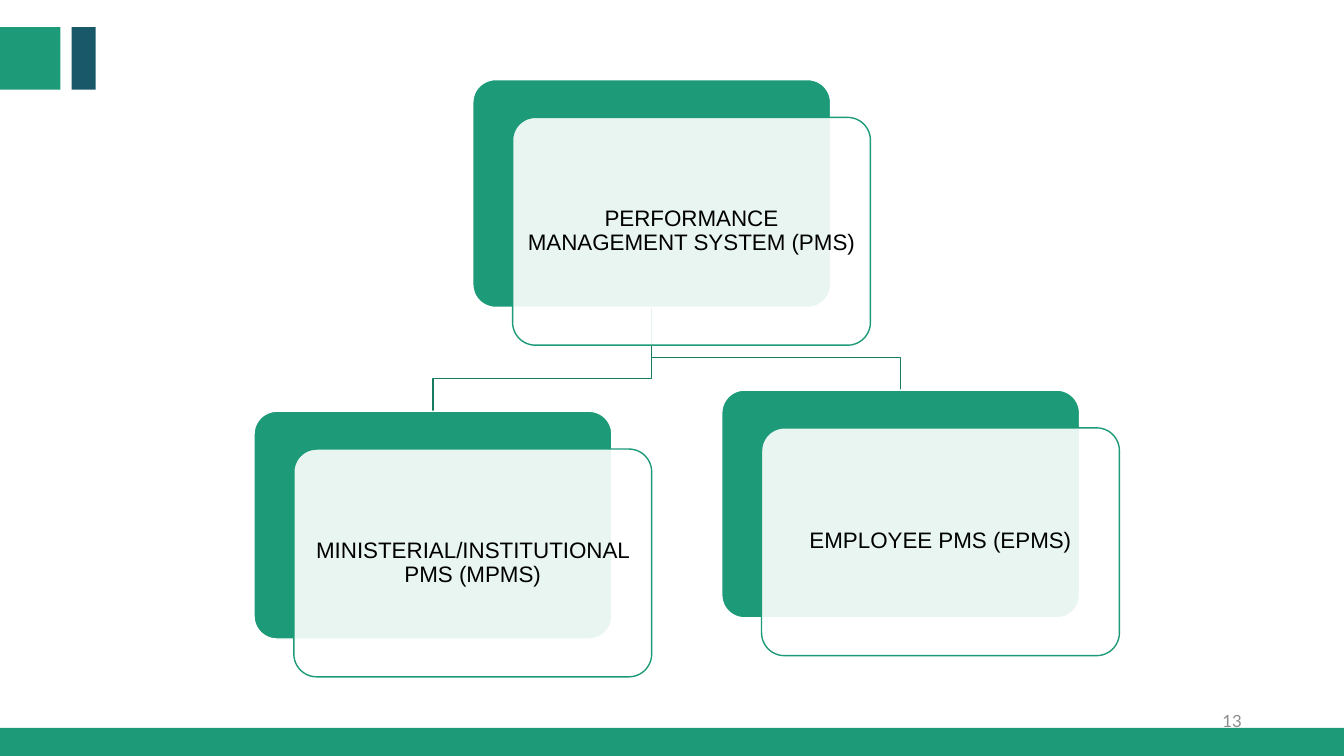
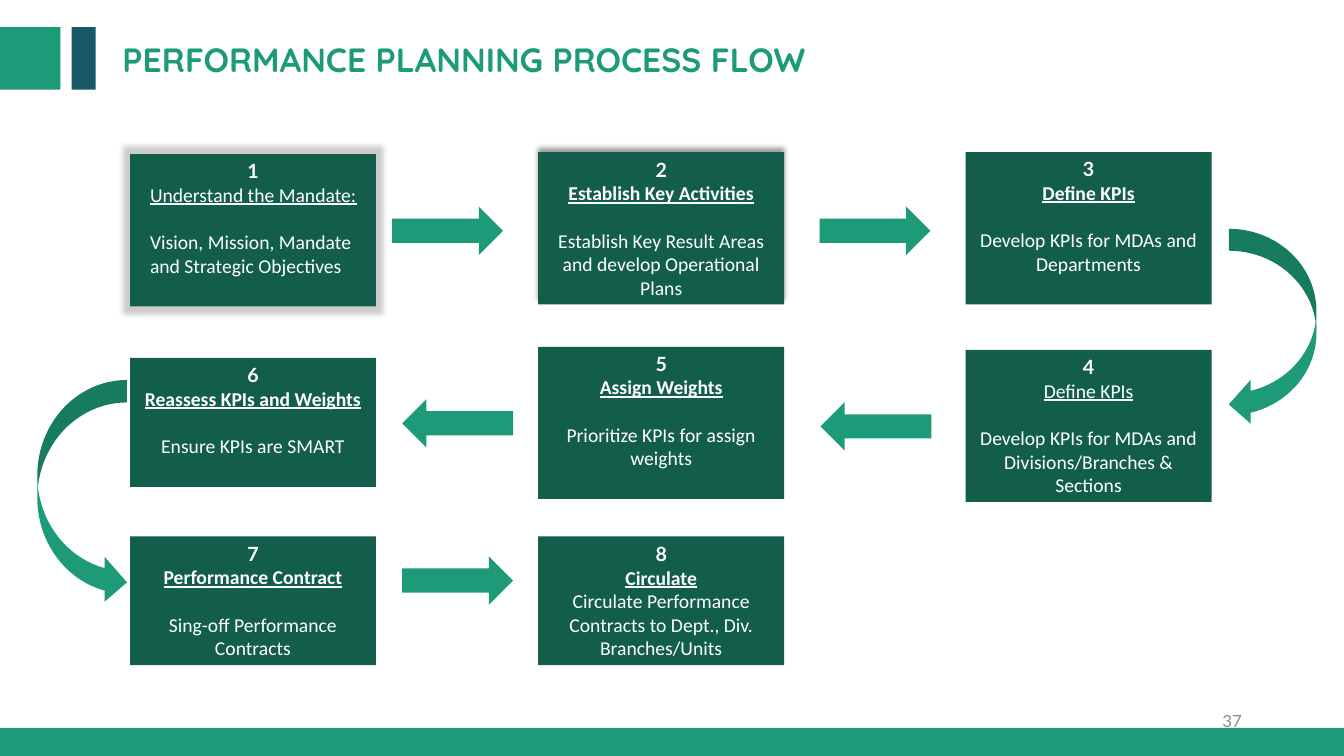
from dataclasses import dataclass

from lxml.etree import SubElement
from pptx import Presentation
from pptx.dml.color import RGBColor
from pptx.enum.shapes import MSO_SHAPE
from pptx.enum.text import MSO_ANCHOR, MSO_AUTO_SIZE, PP_ALIGN
from pptx.oxml.ns import qn
from pptx.util import Inches, Pt


@dataclass(frozen=True)
class Theme:
    """Colours, fonts and type sizes of the deck."""

    green: str = "1D9A78"
    dark_green: str = "125E4A"
    link_green: str = "177B60"
    petrol: str = "195869"
    white: str = "FFFFFF"
    black: str = "000000"
    grey: str = "8C8C8C"
    title_font: str = "Quicksand"
    number_font: str = "Lato"
    step_font: str = "Calibri"
    card_font: str = "Arial"
    title_size: int = 24
    card_size: int = 16
    step_size: int = 14
    number_size: int = 12
    hairline: int = 1


@dataclass(frozen=True)
class Step:
    """One box of the process flow, placed on the grid."""

    number: int
    heading: str
    detail: str
    left: float
    top: float
    height: float = 9.06
    bold: bool = True
    gap: int = 17
    spare: float = 0
    detail_align: PP_ALIGN = PP_ALIGN.CENTER
    indent: float = 0
    shadow: dict | None = None


def write(box, text, *, font, size, color, bold=False, underline=False,
          align=PP_ALIGN.LEFT, before=0, indent=0, spacing=None):
    """Add one formatted paragraph to a box."""
    frame = box.text_frame
    para = frame.add_paragraph() if frame.text else frame.paragraphs[0]
    para.alignment = align
    para.space_before = Pt(before)
    if spacing:
        para.line_spacing = spacing
    if indent:
        para._p.get_or_add_pPr().set("marL", str(Inches(indent)))
    span = para.add_run()
    span.text = text
    span.font.name = font
    span.font.size = Pt(size)
    span.font.bold = bold
    span.font.underline = underline
    span.font.color.rgb = RGBColor.from_string(color)


def add_effect(parent, tag, color, opacity, **attributes):
    """Add an effect with a translucent colour."""
    effect = SubElement(parent, qn(tag), {key: str(value) for key, value in attributes.items()})
    tint = SubElement(effect, qn("a:srgbClr"), val=color)
    SubElement(tint, qn("a:alpha"), val=str(opacity * 1000))


class Composer:
    """Holds the theme, the grid and the current slide."""

    columns, rows = 80, 45
    title_only, blank = 5, 6

    def __init__(self, theme):
        """Start a widescreen deck."""
        self.theme = theme
        self.deck = Presentation()
        self.deck.slide_width = Inches(13.33)
        self.deck.slide_height = Inches(7.5)
        self.page = None

    def place(self, left, top, width=0, height=0):
        """Turn grid units into slide lengths."""
        column = self.deck.slide_width / self.columns
        row = self.deck.slide_height / self.rows
        return [round(value * unit) for value, unit in
                zip((left, top, width, height), (column, row, column, row))]

    def start(self, number, title=None):
        """Add a page with its bands, number and optional title."""
        theme = self.theme
        layout = self.deck.slide_layouts[self.title_only if title else self.blank]
        self.page = self.deck.slides.add_slide(layout)
        box = self.page.shapes.add_textbox(*self.place(56.52, 41.7, 18, 2.4))
        self.frame(box)
        write(box, str(number), font=theme.number_font, size=theme.number_size,
              color=theme.grey, align=PP_ALIGN.RIGHT)
        self.shape(MSO_SHAPE.RECTANGLE, 0, 1.62, 3.6, 3.72, theme.green)
        self.shape(MSO_SHAPE.RECTANGLE, 4.26, 1.62, 1.44, 3.72, theme.petrol)
        self.shape(MSO_SHAPE.RECTANGLE, 0, 43.32, self.columns, 1.68, theme.green)
        if title:
            box = self.page.shapes.title
            box.left, box.top, box.width, box.height = self.place(6.75, 2.1, 69, 2.94)
            self.frame(box, anchor=MSO_ANCHOR.TOP, side=0.09, edge=0.04)
            write(box, title, font=theme.title_font, size=theme.title_size,
                  color=theme.green, bold=True)

    def frame(self, box, anchor=MSO_ANCHOR.MIDDLE, side=0.1, edge=0.05, spare=0):
        """Set wrapping, anchor and margins of a text frame."""
        frame = box.text_frame
        frame.word_wrap = True
        frame.auto_size = MSO_AUTO_SIZE.NONE
        frame.vertical_anchor = anchor
        frame.margin_left = frame.margin_right = Inches(side)
        frame.margin_top = Inches(edge)
        frame.margin_bottom = Inches(edge + spare)

    def paint(self, box, fill=None, line=None):
        """Set the fill and line of a shape and drop its shadow."""
        box.shadow.inherit = False
        if fill:
            box.fill.solid()
            box.fill.fore_color.rgb = RGBColor.from_string(fill)
        else:
            box.fill.background()
        if line:
            box.line.color.rgb = RGBColor.from_string(line)
            box.line.width = Pt(self.theme.hairline)
        else:
            box.line.fill.background()

    def shape(self, kind, left, top, width, height, fill, line=None):
        """Draw a preset shape on the grid."""
        box = self.page.shapes.add_shape(kind, *self.place(left, top, width, height))
        self.paint(box, fill, line)
        return box

    def link(self, points):
        """Draw an open angled line through grid points."""
        start, *others = [tuple(self.place(*point)[:2]) for point in points]
        builder = self.page.shapes.build_freeform(*start)
        builder.add_line_segments(others, close=False)
        self.paint(builder.convert_to_shape(), line=self.theme.link_green)

    def card(self, text, left, top, width, height):
        """Draw a solid card with a translucent text panel in front."""
        theme = self.theme
        back = self.shape(MSO_SHAPE.ROUNDED_RECTANGLE, left, top, width, height,
                          theme.green, theme.white)
        panel = self.shape(MSO_SHAPE.ROUNDED_RECTANGLE, left + 2.37, top + 2.25,
                           width, height, theme.white, theme.green)
        for box in (back, panel):
            box.adjustments[0] = 0.1
        tint = panel.element.spPr.find(qn("a:solidFill"))[0]
        SubElement(tint, qn("a:alpha"), val="90000")
        self.frame(panel, side=0.07, edge=0.07)
        write(panel, text, font=theme.card_font, size=theme.card_size,
              color=theme.black, align=PP_ALIGN.CENTER, spacing=0.9)

    def step(self, step):
        """Draw one numbered step of the process."""
        theme = self.theme
        box = self.shape(MSO_SHAPE.RECTANGLE, step.left, step.top, 14.64, step.height,
                         theme.dark_green)
        if step.shadow:
            add_effect(box.element.spPr.find(qn("a:effectLst")), "a:outerShdw",
                       theme.black, **step.shadow)
        self.frame(box, spare=step.spare)
        style = dict(size=theme.step_size, color=theme.white)
        write(box, str(step.number), font=theme.number_font, bold=True,
              align=PP_ALIGN.CENTER, **style)
        style.update(font=theme.step_font, align=step.detail_align, indent=step.indent)
        write(box, step.heading, bold=step.bold, underline=True, **style)
        write(box, step.detail, before=step.gap, **style)


def build_hierarchy(composer):
    """Build the page with the system and its two parts."""
    composer.start(13)
    width, height, drop = 21.3, 13.56, 1.95
    root = ("PERFORMANCE MANAGEMENT SYSTEM (PMS)", 28.14, 4.74)
    children = [("MINISTERIAL/INSTITUTIONAL PMS (MPMS)", 15.12, 24.48),
                ("EMPLOYEE PMS (EPMS)", 42.96, 23.22)]
    center, bottom = root[1] + width / 2, root[2] + height
    for _, left, top in children:
        middle = left + width / 2
        composer.link([(center, bottom), (center, top - drop),
                       (middle, top - drop), (middle, top)])
    for text, left, top in (root, *children):
        composer.card(text, left, top, width, height)


def build_process(composer):
    """Build the page with the eight planning steps."""
    composer.start(37, "PERFORMANCE PLANNING PROCESS FLOW")
    first, second, third = 7.74, 32.04, 57.48
    line, low = 0.24, 7.68
    halo = dict(opacity=20, blurRad=Pt(4), sx=106000, sy=110000, algn="ctr")
    lift = dict(opacity=40, blurRad=Pt(4), dist=Pt(3), dir=16200000)
    steps = [
        Step(1, "Understand the Mandate:", "Vision, Mission, Mandate and Strategic Objectives",
             first, 9.18, bold=False, spare=line, detail_align=PP_ALIGN.LEFT,
             indent=0.1, shadow=halo),
        Step(2, "Establish Key Activities",
             "Establish Key Result Areas and develop Operational Plans",
             second, 9.06, shadow=lift),
        Step(3, "Define KPIs", "Develop KPIs for MDAs and Departments",
             third, 9.06, spare=line),
        Step(4, "Define KPIs", "Develop KPIs for MDAs and Divisions/Branches & Sections",
             third, 20.82, bold=False),
        Step(5, "Assign Weights", "Prioritize KPIs for assign weights",
             second, 20.64, spare=line),
        Step(6, "Reassess KPIs and Weights", "Ensure KPIs are SMART",
             first, 21.3, low, spare=line),
        Step(7, "Performance Contract", "Sing-off Performance Contracts",
             first, 31.92, low),
        Step(8, "Circulate", "Circulate Performance Contracts to Dept., Div. Branches/Units",
             second, 31.92, low, gap=0),
    ]
    for step in steps:
        composer.step(step)
    straight = (6.6, 2.88)
    arrows = [
        (MSO_SHAPE.RIGHT_ARROW, 23.34, 12.3, *straight),
        (MSO_SHAPE.RIGHT_ARROW, 48.78, 12.3, *straight),
        (MSO_SHAPE.CURVED_LEFT_ARROW, 73.14, 13.62, 5.22, 11.76),
        (MSO_SHAPE.LEFT_ARROW, 48.84, 23.94, *straight),
        (MSO_SHAPE.LEFT_ARROW, 23.94, 23.76, *straight),
        (MSO_SHAPE.CURVED_RIGHT_ARROW, 2.22, 22.62, 5.34, 13.38),
        (MSO_SHAPE.RIGHT_ARROW, 23.94, 33.12, *straight),
    ]
    for arrow in arrows:
        composer.shape(*arrow, composer.theme.green)


def main():
    """Build and save the deck."""
    composer = Composer(Theme())
    build_hierarchy(composer)
    build_process(composer)
    composer.deck.save("out.pptx")


if __name__ == "__main__":
    main()
